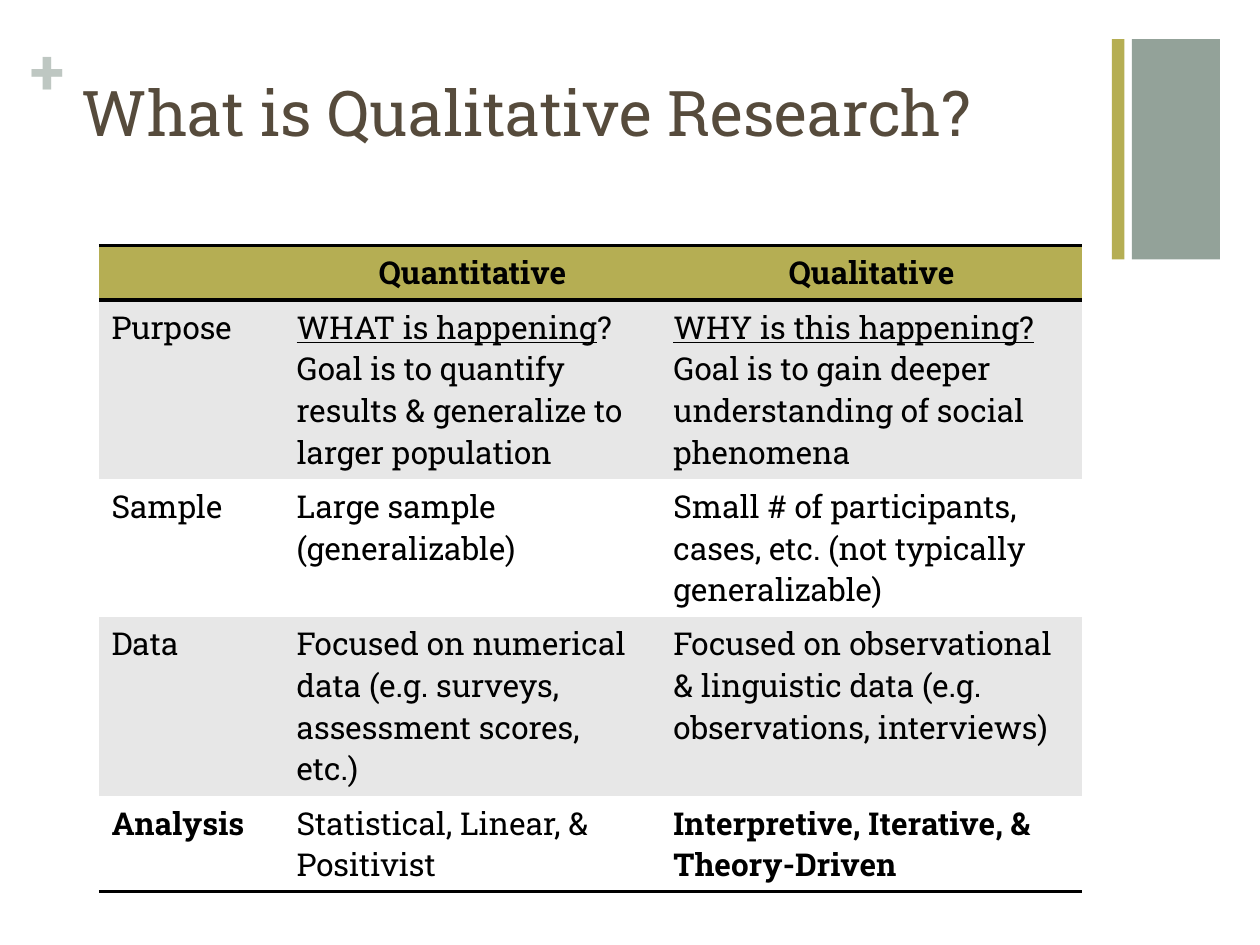
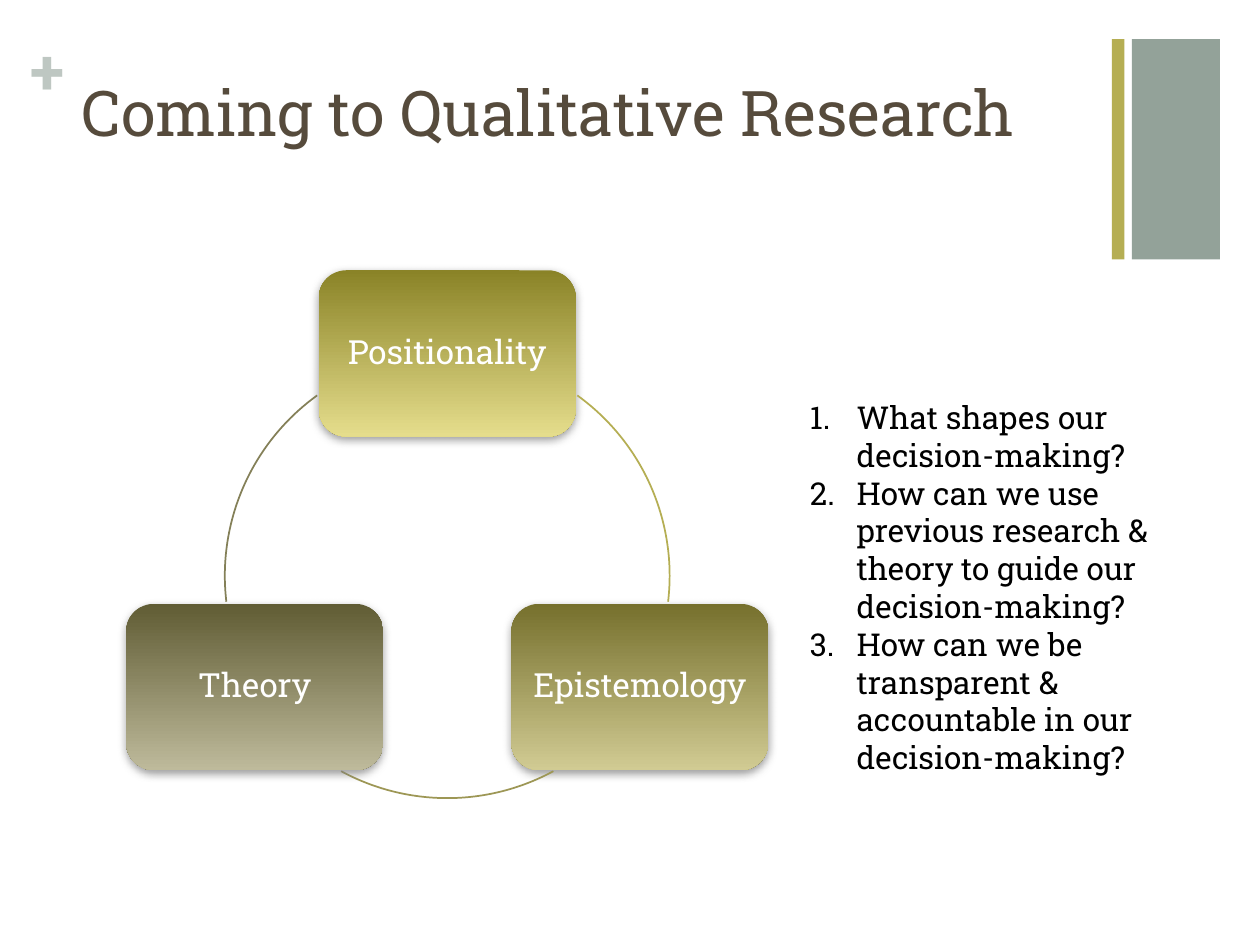
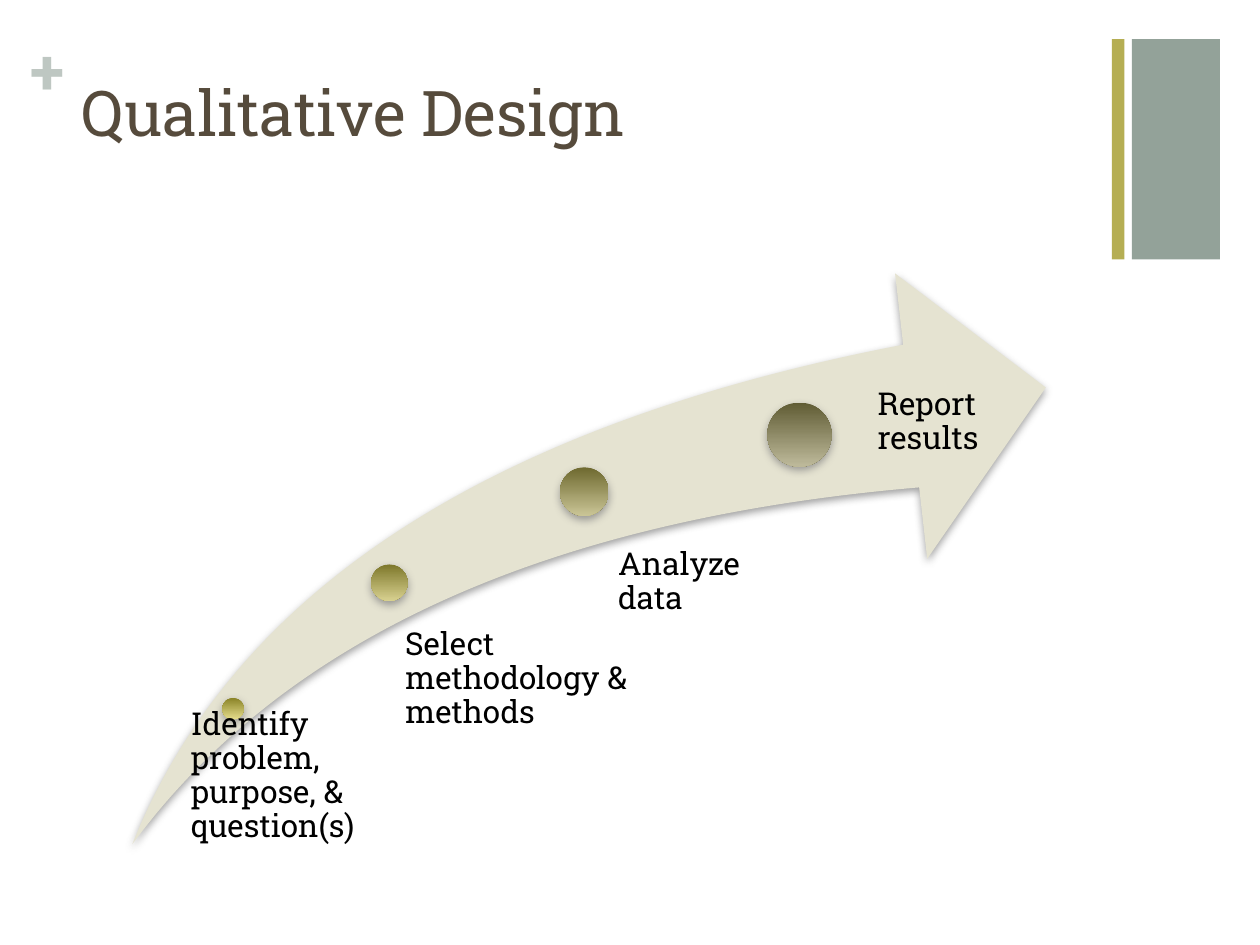
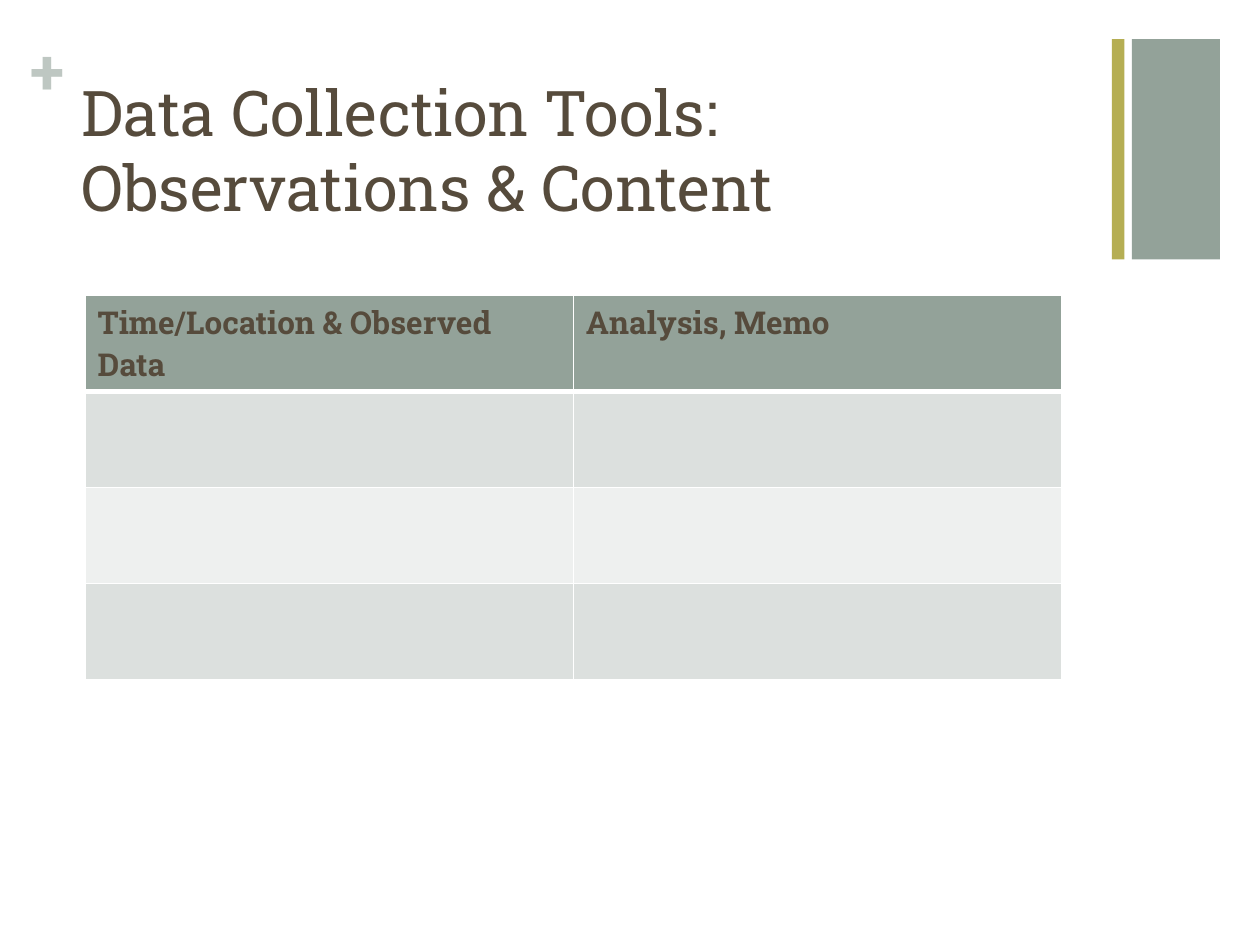
"""Build four slides that introduce qualitative research."""
from dataclasses import dataclass
from math import cos, radians, sin

from lxml.etree import SubElement
from pptx import Presentation
from pptx.dml.color import RGBColor
from pptx.enum.shapes import MSO_SHAPE
from pptx.enum.text import MSO_ANCHOR, MSO_AUTO_SIZE, PP_ALIGN
from pptx.oxml.ns import qn
from pptx.util import Inches, Pt


@dataclass(frozen=True)
class Theme:
    font: str = "Roboto Slab"
    title_size: int = 36
    node_size: int = 19
    body_size: int = 18
    brown: str = "564B3C"
    sage: str = "93A299"
    pale_sage: str = "BEC7C2"
    olive: str = "B5AE53"
    sand: str = "E5E3D1"
    black: str = "000000"
    white: str = "FFFFFF"
    gray: str = "E7E7E7"
    shadow: str = "808080"
    dark_band: str = "DCE0DE"
    light_band: str = "EEF0EF"
    no_table_style: str = "{2D5ABB26-0587-4C30-8999-92F81FD0307C}"


theme = Theme()
COLUMNS, ROWS = 100, 75
presentation = Presentation()
presentation.slide_width = Inches(10)
presentation.slide_height = Inches(7.5)


def grid(left, top, width, height):
    """Turn grid columns and rows into slide lengths."""
    column = presentation.slide_width / COLUMNS
    row = presentation.slide_height / ROWS
    return int(left * column), int(top * row), int(width * column), int(height * row)


def style(text_frame, size, color, bold=False, spacing=1.0, align=PP_ALIGN.LEFT):
    """Format every paragraph and run of a text frame."""
    for paragraph in text_frame.paragraphs:
        paragraph.alignment = align
        paragraph.line_spacing = spacing
        for run in paragraph.runs:
            run.font.name = theme.font
            run.font.size = Pt(size)
            run.font.bold = bold
            run.font.color.rgb = RGBColor.from_string(color)


layout = presentation.slide_layouts[5]
slides = []
for title_text in ("What is Qualitative Research?", "Coming to Qualitative Research",
                   "Qualitative Design", "Data Collection Tools: Observations & Content"):
    slide = presentation.slides.add_slide(layout)
    title = slide.shapes.title
    title.left, title.top, title.width, title.height = grid(5.5, 5.3, 82.6, 12.2)
    title.text_frame.text = title_text
    title.text_frame.auto_size = MSO_AUTO_SIZE.NONE
    title.text_frame.vertical_anchor = MSO_ANCHOR.TOP
    style(title.text_frame, theme.title_size, theme.brown)
    slides.append(slide)
comparison, cycle, design, tools = slides

for left, width, color in ((89.83, 7, theme.sage), (88.25, 1, theme.olive)):
    band = comparison.shapes.add_shape(MSO_SHAPE.RECTANGLE, *grid(left, 3.1, width, 17.5))
    band.shadow.inherit = False
    band.fill.solid()
    band.fill.fore_color.rgb = RGBColor.from_string(color)
    band.line.fill.background()
    layout.shapes.element.append(band.element)
plus = comparison.shapes.add_textbox(*grid(2.4, 2.5, 2.9, 6.1))
plus.text_frame.text = "+"
plus.text_frame.margin_left = plus.text_frame.margin_right = 0
plus.text_frame.margin_top = plus.text_frame.margin_bottom = 0
style(plus.text_frame, theme.title_size, theme.pale_sage, bold=True)
layout.shapes.element.append(plus.element)

comparison_cells = (
    ("", "Quantitative", "Qualitative"),
    ("Purpose",
     "WHAT is happening\nGoal is to quantify results & generalize to larger population",
     "WHY is this happening?\nGoal is to gain deeper understanding of social phenomena"),
    ("Sample", "Large sample (generalizable)",
     "Small # of participants, cases, etc. (not typically generalizable)"),
    ("Data", "Focused on numerical data (e.g. surveys, assessment scores, etc.)",
     "Focused on observational & linguistic data (e.g. observations, interviews)"),
    ("Analysis", "Statistical, Linear, & Positivist",
     "Interpretive, Iterative, & Theory-Driven"),
)
tools_cells = (("Time/Location & Observed Data", "Analysis, Memo"),) + (("", ""),) * 3
emphasized = ("Analysis", "Interpretive, Iterative, & Theory-Driven")
thin = {"L": 1, "R": 1, "B": 1}
table_plans = (
    (comparison, (7.85, 19.5, 78, 44.1), (14.7, 29.9, 33.45), 4.1, comparison_cells,
     (theme.olive, theme.gray, theme.white, theme.gray, theme.white),
     theme.black, theme.black, PP_ALIGN.CENTER,
     ({"T": 2, "B": 2}, {}, {}, {}, {"B": 2})),
    (tools, (6.75, 23.45, 77.5, 30.5), (38.75, 38.75), 7.62, tools_cells,
     (theme.sage, theme.dark_band, theme.light_band, theme.dark_band),
     theme.brown, theme.white, PP_ALIGN.LEFT,
     (thin | {"T": 1, "B": 3}, thin, thin, thin)),
)
for (slide, area, widths, row_height, contents, fills,
     text_color, border_color, header_align, borders) in table_plans:
    frame = slide.shapes.add_table(len(contents), len(widths), *grid(*area))
    table = frame.table
    for style_id in frame.element.iter(qn("a:tableStyleId")):
        style_id.text = theme.no_table_style
    for column, width in zip(table.columns, widths):
        column.width = grid(0, 0, width, 0)[2]
    for row_index, row_texts in enumerate(contents):
        table.rows[row_index].height = grid(0, 0, 0, row_height)[3]
        for column_index, text in enumerate(row_texts):
            cell = table.cell(row_index, column_index)
            cell.fill.solid()
            cell.fill.fore_color.rgb = RGBColor.from_string(fills[row_index])
            cell.text_frame.text = text
            header = row_index == 0
            style(cell.text_frame, theme.body_size, text_color,
                  bold=header or text in emphasized,
                  align=header_align if header else PP_ALIGN.LEFT)
    frame.height = grid(*area)[3]
    for index, properties in enumerate(list(frame.element.iter(qn("a:tcPr")))):
        row_borders = borders[index // len(widths)]
        sides = [side for side in "LRTB" if side in row_borders]
        for position, side in enumerate(sides):
            line = SubElement(properties, qn(f"a:ln{side}"), w=str(Pt(row_borders[side])))
            fill = SubElement(line, qn("a:solidFill"))
            SubElement(fill, qn("a:srgbClr"), val=border_color)
            properties.insert(position, line)
    if slide is comparison:
        for column_index in (1, 2):
            question = table.cell(1, column_index).text_frame
            question.paragraphs[0].runs[0].font.underline = True
        question = table.cell(1, 1).text_frame
        question.paragraphs[0].add_run().text = "?"
        style(question, theme.body_size, theme.black)

raised = []
center_x, center_y, radius = 35.5, 45.7, 17.65
node_width, node_height = 20.4, 13.2
nodes = (
    ("Positionality", -90, "8A8327", "E5DD8C", theme.olive, (-54.2, 6.7)),
    ("Epistemology", 30, "76702D", "D1CB93", "9D9755", (61.5, 118.5)),
    ("Theory", 150, "605C34", "BEBA9B", "848058", (173.3, 234.2)),
)
for text, angle, top_color, bottom_color, arc_color, arc_angles in nodes:
    left = center_x + radius * cos(radians(angle)) - node_width / 2
    top = center_y + radius * sin(radians(angle)) - node_height / 2
    node = cycle.shapes.add_shape(MSO_SHAPE.ROUNDED_RECTANGLE,
                                  *grid(left, top, node_width, node_height))
    node.text_frame.text = text
    node.text_frame.word_wrap = True
    node.text_frame.vertical_anchor = MSO_ANCHOR.MIDDLE
    node.text_frame.margin_left = node.text_frame.margin_right = Inches(0.05)
    style(node.text_frame, theme.node_size, theme.white, spacing=0.9, align=PP_ALIGN.CENTER)
    raised.append((node, top_color, bottom_color))

    arc = cycle.shapes.add_shape(MSO_SHAPE.ARC, *grid(center_x - radius, center_y - radius,
                                                      2 * radius, 2 * radius))
    for index, arc_angle in enumerate(arc_angles):
        arc.adjustments[index] = arc_angle % 360 * 0.6
    arc.shadow.inherit = False
    arc.fill.background()
    arc.line.color.rgb = RGBColor.from_string(arc_color)
    arc.line.width = Pt(1)

questions = cycle.shapes.add_textbox(*grid(63.3, 31.1, 32.8, 31.3))
questions.text_frame.word_wrap = True
questions.text_frame.text = "\n".join((
    "What shapes our decision-making?",
    "How can we use previous research & theory to guide our decision-making?",
    "How can we be transparent & accountable in our decision-making?",
))
style(questions.text_frame, theme.body_size, theme.black)
for properties in questions.element.iter(qn("a:pPr")):
    properties.set("marL", str(Inches(0.37)))
    properties.set("indent", str(-Inches(0.37)))
    SubElement(properties, qn("a:buAutoNum"), type="arabicPeriod")

arrow = design.shapes.add_shape(MSO_SHAPE.SWOOSH_ARROW, *grid(10.5, 21.7, 72.5, 45.3))
arrow.adjustments[0] = arrow.adjustments[1] = 0.25
raised.append((arrow, theme.sand, theme.sand))
stages = (
    ("Identify problem, purpose, & question(s)", (17.65, 55.4, 1.7),
     (14.25, 56.2, 17.9, 10.8), 0.09, "8A8327", "E5DD8C"),
    ("Select methodology & methods", (29.45, 44.8, 2.9),
     (30.65, 49.85, 20.5, 9.2), 0.15, "7D772A", "D8D190"),
    ("Analyze data", (44.45, 37.1, 3.85),
     (47.05, 43.5, 15.2, 8.6), 0.2, "6E692F", "CAC596"),
    ("Report results", (60.9, 31.95, 5.1),
     (66.95, 30.8, 15.2, 14.3), 0.27, "605C34", "BEBA9B"),
)
for text, (left, top, diameter), area, indent, top_color, bottom_color in stages:
    dot = design.shapes.add_shape(MSO_SHAPE.OVAL, *grid(left, top, diameter, diameter))
    raised.append((dot, top_color, bottom_color))
    label = design.shapes.add_textbox(*grid(*area))
    label.text_frame.word_wrap = True
    label.text_frame.text = text
    label.text_frame.margin_left = Inches(indent)
    label.text_frame.margin_top = label.text_frame.margin_right = 0
    label.text_frame.margin_bottom = 0
    style(label.text_frame, theme.body_size, theme.black, spacing=0.9)

for shape, top_color, bottom_color in raised:
    if top_color == bottom_color:
        shape.fill.solid()
        shape.fill.fore_color.rgb = RGBColor.from_string(top_color)
    else:
        shape.fill.gradient()
        shape.fill.gradient_angle = 270
        for stop, color in zip(shape.fill.gradient_stops, (top_color, bottom_color)):
            stop.color.rgb = RGBColor.from_string(color)
    shape.line.fill.background()
    shape.shadow.inherit = False
    effects = shape.element.spPr.find(qn("a:effectLst"))
    shadow = SubElement(effects, qn("a:outerShdw"), blurRad=str(Pt(5)), dist=str(Pt(2)),
                        dir="5400000", rotWithShape="0")
    shadow_color = SubElement(shadow, qn("a:srgbClr"), val=theme.shadow)
    SubElement(shadow_color, qn("a:alpha"), val="75000")

presentation.save("out.pptx")
